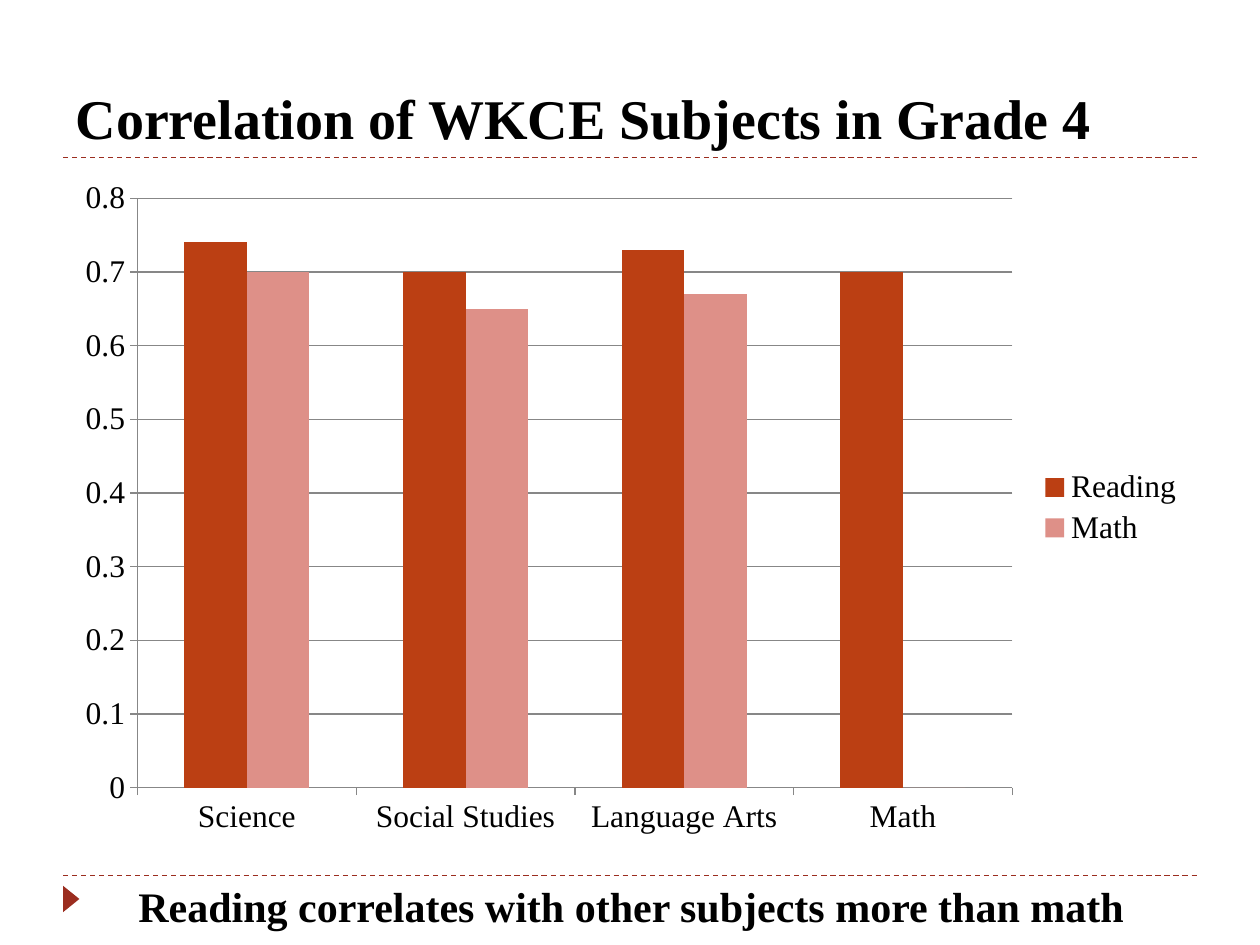
from dataclasses import dataclass

from lxml import etree
from pptx import Presentation
from pptx.chart.data import CategoryChartData
from pptx.dml.color import RGBColor
from pptx.enum.chart import XL_CHART_TYPE, XL_LEGEND_POSITION, XL_TICK_MARK
from pptx.enum.dml import MSO_LINE
from pptx.enum.shapes import MSO_CONNECTOR, MSO_SHAPE
from pptx.enum.text import MSO_ANCHOR, MSO_AUTO_SIZE, PP_ALIGN
from pptx.oxml.ns import qn
from pptx.slide import Slide
from pptx.text.text import TextFrame
from pptx.util import Inches, Pt

CLUSTERED = XL_CHART_TYPE.COLUMN_CLUSTERED
LEGEND_RIGHT = XL_LEGEND_POSITION.RIGHT
TICK_OUT = XL_TICK_MARK.OUTSIDE
TICK_NONE = XL_TICK_MARK.NONE
DASH = MSO_LINE.DASH
STRAIGHT = MSO_CONNECTOR.STRAIGHT
TRIANGLE = MSO_SHAPE.ISOSCELES_TRIANGLE
TOP, BOTTOM = MSO_ANCHOR.TOP, MSO_ANCHOR.BOTTOM
NO_AUTOFIT = MSO_AUTO_SIZE.NONE
LEFT = PP_ALIGN.LEFT

FONT = "Times New Roman"
BLACK = RGBColor(0x00, 0x00, 0x00)
ACCENT = RGBColor(0x9B, 0x2D, 0x1F)
READING_COLOR = RGBColor(0xBB, 0x3F, 0x13)
MATH_COLOR = RGBColor(0xDE, 0x90, 0x88)
GRID_GRAY = RGBColor(0x87, 0x87, 0x87)

MARGIN = 0.5
CONTENT_WIDTH = 9
RULE_HEIGHTS = (1.25, 6.95)


@dataclass(frozen=True)
class SubjectSeries:
    name: str
    correlations: tuple[float, ...]
    color: RGBColor


SUBJECTS = ("Science", "Social Studies", "Language Arts", "Math")
SERIES = (
    SubjectSeries("Reading", (0.74, 0.7, 0.73, 0.7), READING_COLOR),
    SubjectSeries("Math", (0.7, 0.65, 0.67, 0), MATH_COLOR),
)


def write_text(frame: TextFrame, text: str, *, size: float,
               bold: bool = True, color: RGBColor = BLACK,
               anchor: MSO_ANCHOR = TOP) -> None:
    frame.word_wrap = True
    frame.auto_size = NO_AUTOFIT
    frame.vertical_anchor = anchor
    paragraph = frame.paragraphs[0]
    paragraph.alignment = LEFT
    run = paragraph.add_run()
    run.text = text
    run.font.name = FONT
    run.font.size = Pt(size)
    run.font.bold = bold
    run.font.color.rgb = color


def add_dashed_rule(slide: Slide, y: float) -> None:
    rule = slide.shapes.add_connector(
        STRAIGHT, Inches(MARGIN), Inches(y),
        Inches(MARGIN + CONTENT_WIDTH), Inches(y))
    rule.line.color.rgb = ACCENT
    rule.line.width = Pt(0.75)
    rule.line.dash_style = DASH
    etree.SubElement(rule._element.spPr, qn("a:effectLst"))


def add_marker(slide: Slide) -> None:
    marker = slide.shapes.add_shape(
        TRIANGLE, Inches(0.46), Inches(7.07), Inches(0.21), Inches(0.13))
    marker.rotation = 90
    marker.shadow.inherit = False
    marker.fill.solid()
    marker.fill.fore_color.rgb = ACCENT
    marker.line.fill.background()


def add_correlation_chart(slide: Slide) -> None:
    data = CategoryChartData()
    data.categories = SUBJECTS
    for subject in SERIES:
        data.add_series(subject.name, subject.correlations)
    chart = slide.shapes.add_chart(
        CLUSTERED, Inches(MARGIN), Inches(1.33),
        Inches(CONTENT_WIDTH), Inches(5.4), data).chart

    chart.has_title = False
    chart.font.name = FONT
    chart.font.size = Pt(18)
    chart.font.color.rgb = BLACK
    chart.has_legend = True
    chart.legend.position = LEGEND_RIGHT
    chart.legend.include_in_layout = False

    plot = chart.plots[0]
    plot.gap_width = 150
    plot.overlap = 0
    plot.vary_by_categories = False
    for bars, subject in zip(plot.series, SERIES):
        bars.format.fill.solid()
        bars.format.fill.fore_color.rgb = subject.color

    correlation_axis = chart.value_axis
    correlation_axis.minimum_scale = 0
    correlation_axis.maximum_scale = 0.8
    correlation_axis.major_unit = 0.1
    correlation_axis.has_major_gridlines = True
    gridlines = correlation_axis.major_gridlines
    for axis in (chart.category_axis, correlation_axis):
        axis.major_tick_mark = TICK_OUT
        axis.minor_tick_mark = TICK_NONE
    for part in (chart.category_axis, correlation_axis, gridlines):
        part.format.line.color.rgb = GRID_GRAY
        part.format.line.width = Pt(0.75)


def main() -> None:
    presentation = Presentation()
    presentation.slide_width = Inches(10)
    presentation.slide_height = Inches(7.5)
    slide = presentation.slides.add_slide(presentation.slide_layouts[5])

    # Rules and marker
    for y in RULE_HEIGHTS:
        add_dashed_rule(slide, y)
    add_marker(slide)

    # Title
    title = slide.shapes.title
    title.left, title.top = Inches(MARGIN), Inches(0.17)
    title.width, title.height = Inches(CONTENT_WIDTH), Inches(1.08)
    write_text(title.text_frame, "Correlation of WKCE Subjects in Grade 4",
               size=32, anchor=BOTTOM)

    # Chart
    add_correlation_chart(slide)

    # Conclusion
    conclusion = slide.shapes.add_textbox(
        Inches(1), Inches(6.94), Inches(8.17), Inches(0.5))
    write_text(conclusion.text_frame,
               "Reading correlates with other subjects more than math", size=24)

    presentation.save("out.pptx")


if __name__ == "__main__":
    main()
